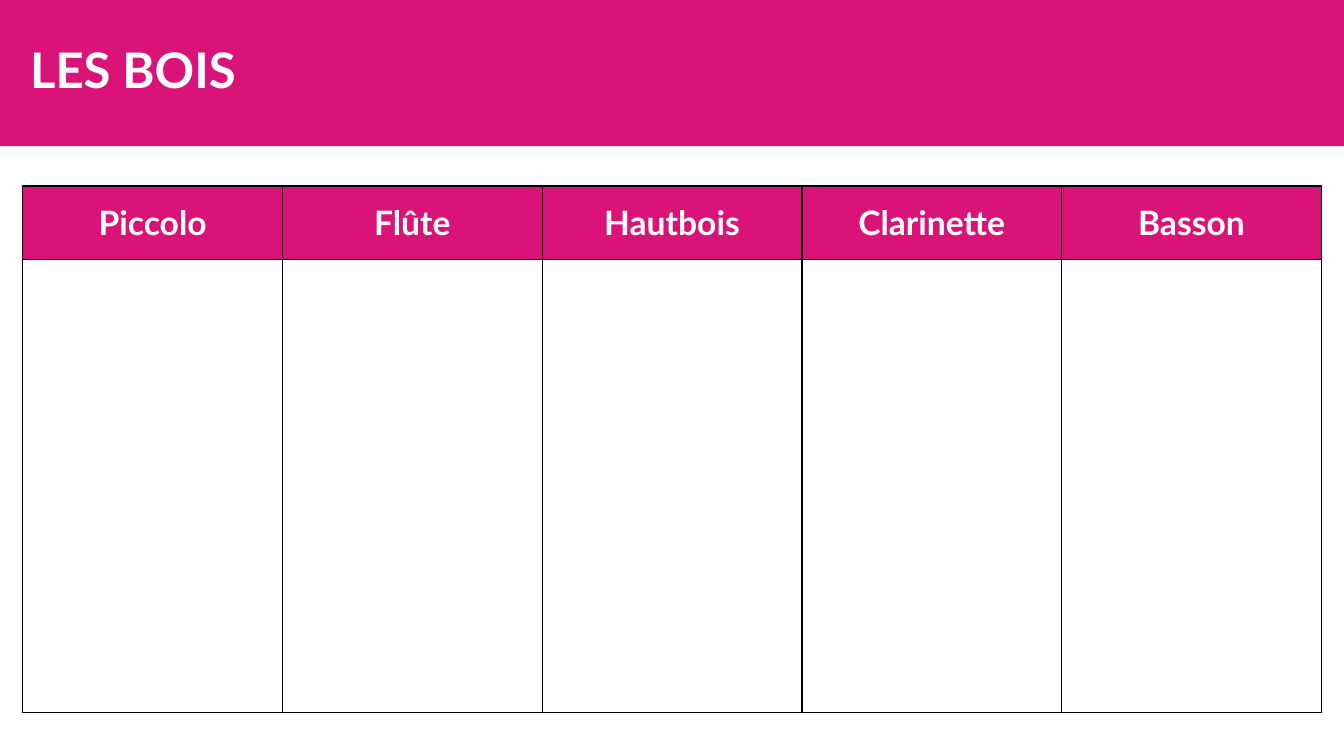
from lxml import etree
from pptx import Presentation
from pptx.dml.color import RGBColor
from pptx.enum import shapes, text
from pptx.oxml import ns
from pptx.util import Pt

PINK = RGBColor(0xD9, 0x13, 0x78)
WHITE = RGBColor(0xFF, 0xFF, 0xFF)
BLACK = RGBColor(0, 0, 0)
FONT = "Lato"
WINDS = ["Piccolo", "Flûte", "Hautbois", "Clarinette", "Basson"]


def add_run(para, words, size):
    """Add a bold white run to a paragraph."""
    run = para.add_run()
    run.text = words
    run.font.name = FONT
    run.font.size = Pt(size)
    run.font.bold = True
    run.font.color.rgb = WHITE


def add_edges(cell):
    """Draw a thin black line on each side of a cell."""
    props = cell._tc.get_or_add_tcPr()
    for spot, side in enumerate(("lnL", "lnR", "lnT", "lnB")):
        line = etree.Element(ns.qn(f"a:{side}"), w=str(Pt(1)))
        fill = etree.SubElement(line, ns.qn("a:solidFill"))
        etree.SubElement(fill, ns.qn("a:srgbClr"), val=str(BLACK))
        props.insert(spot, line)


def add_grid(slide, left, top, width, heights):
    """Place the table of instruments, with a head row and a blank row."""
    grid = slide.shapes.add_table(
        len(heights), len(WINDS), Pt(left), Pt(top), Pt(width), Pt(sum(heights))
    ).table
    for col in grid.columns:
        col.width = Pt(width / len(WINDS))
    for row, height in zip(grid.rows, heights):
        row.height = Pt(height)
    for cell in grid.iter_cells():
        cell.fill.solid()
        cell.fill.fore_color.rgb = WHITE
        add_edges(cell)
    for cell, name in zip(grid.rows[0].cells, WINDS):
        cell.fill.fore_color.rgb = PINK
        cell.vertical_anchor = text.MSO_ANCHOR.MIDDLE
        para = cell.text_frame.paragraphs[0]
        para.alignment = text.PP_ALIGN.CENTER
        add_run(para, name, 24)


def add_banner(slide, left, top, width, height):
    """Place the title band."""
    band = slide.shapes.add_shape(
        shapes.MSO_SHAPE.RECTANGLE, Pt(left), Pt(top), Pt(width), Pt(height)
    )
    band.shadow.inherit = False
    band.fill.solid()
    band.fill.fore_color.rgb = PINK
    band.line.fill.background()
    frame = band.text_frame
    frame.word_wrap = True
    frame.margin_left = Pt(21.5)
    frame.vertical_anchor = text.MSO_ANCHOR.MIDDLE
    para = frame.paragraphs[0]
    para.alignment = text.PP_ALIGN.LEFT
    para.line_spacing = 0.9
    add_run(para, "LES BOIS", 35)


def main():
    """Build and save the slide."""
    deck = Presentation()
    deck.slide_width, deck.slide_height = Pt(960), Pt(540)
    slide = deck.slides.add_slide(deck.slide_layouts[6])
    add_grid(slide, 16.3, 132.8, 927.5, (52.8, 323.5))
    add_banner(slide, 0, 0, 960, 104.4)
    deck.save("out.pptx")


if __name__ == "__main__":
    main()
